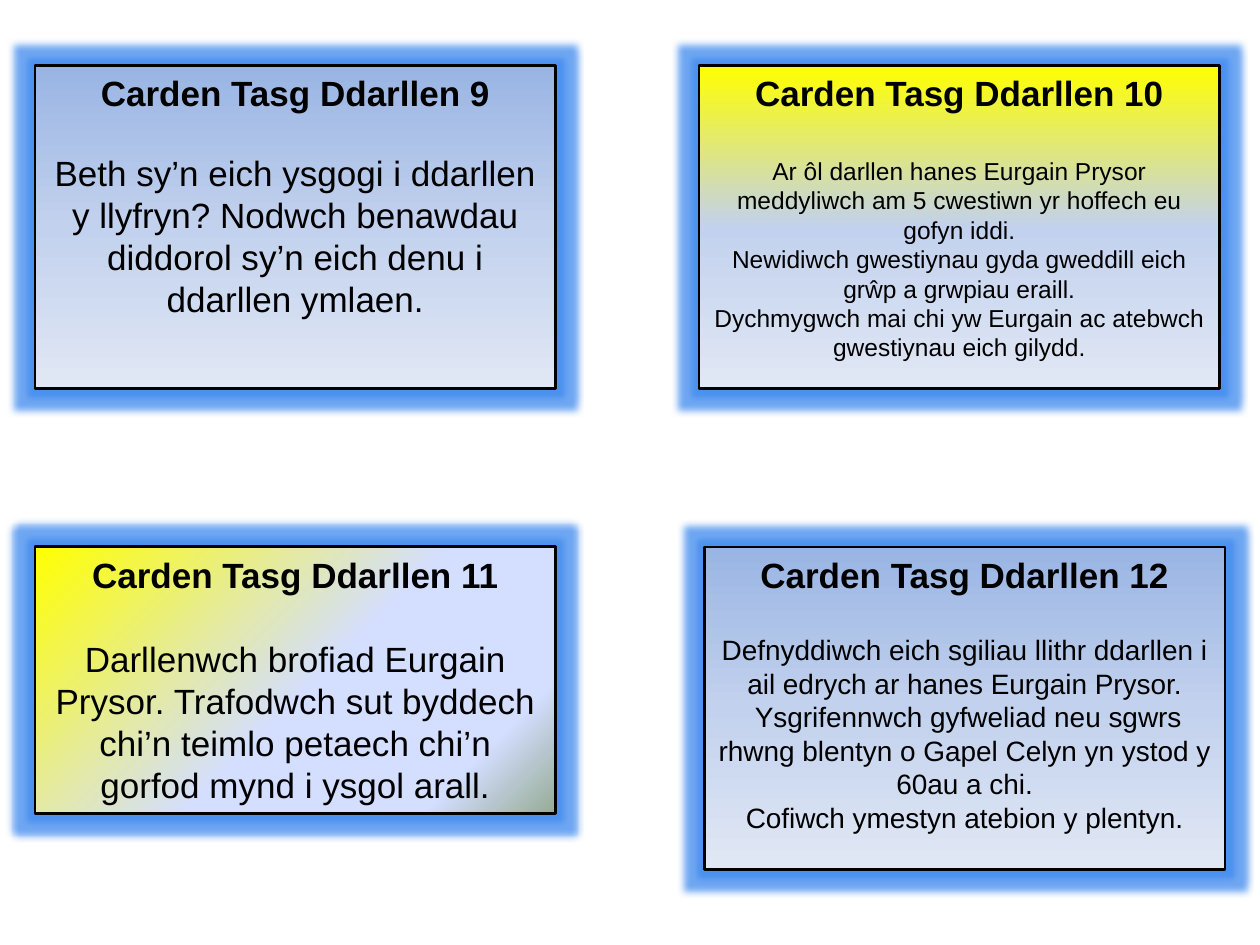
"""Build a slide with four Welsh reading task cards."""

from dataclasses import dataclass

from lxml.etree import SubElement
from pptx import Presentation
from pptx.dml.color import RGBColor
from pptx.enum.shapes import MSO_SHAPE
from pptx.enum.text import MSO_ANCHOR, MSO_AUTO_SIZE, PP_ALIGN
from pptx.oxml.ns import qn
from pptx.shapes.autoshape import Shape
from pptx.slide import Slide
from pptx.util import Pt


@dataclass(frozen=True)
class Gradient:
    stops: tuple[tuple[int, str], ...]
    angle: int = 90


@dataclass(frozen=True)
class Theme:
    font: str = "Arial"
    ink: RGBColor = RGBColor(0, 0, 0)
    title_size: int = 20
    border: float = 1.5
    glow: str = "3F8AEE"
    glow_radius: int = 8
    glow_opacity: int = 75
    blue: Gradient = Gradient(((0, "9AB5E4"), (50, "C2D1ED"), (100, "E1E8F5")))
    yellow: Gradient = Gradient(((0, "FFFF00"), (50, "C2D1ED"), (100, "E1E8F5")))
    diagonal: Gradient = Gradient(
        ((0, "FFFF00"), (53, "D4DEFF"), (83, "D4DEFF"), (100, "96AB94")), 45
    )


@dataclass(frozen=True)
class Card:
    number: int
    left: float
    top: float
    gradient: Gradient
    body_size: int
    title_gap: float
    body: tuple[str, ...]
    height: float = 184.5


THEME = Theme()
CARD_WIDTH = 297.5
LEFT, TOP, BOTTOM = 20, 37.5, 312.5

CARDS = (
    Card(9, LEFT, TOP, THEME.blue, 20, 21.5, (
        "Beth sy’n eich ysgogi i ddarllen y llyfryn? Nodwch benawdau "
        "diddorol sy’n eich denu i ddarllen ymlaen.",
    )),
    Card(11, LEFT, BOTTOM, THEME.diagonal, 20, 24, (
        "Darllenwch brofiad Eurgain Prysor. Trafodwch sut byddech chi’n "
        "teimlo petaech chi’n gorfod mynd i ysgol arall.",
    ), height=152.5),
    Card(10, 399.5, TOP, THEME.yellow, 14, 24, (
        "Ar ôl darllen hanes Eurgain Prysor meddyliwch am 5 cwestiwn yr "
        "hoffech eu gofyn iddi.",
        "Newidiwch gwestiynau gyda gweddill eich grŵp a grwpiau eraill.",
        "Dychmygwch mai chi yw Eurgain ac atebwch gwestiynau eich gilydd.",
    )),
    Card(12, 402.5, BOTTOM, THEME.blue, 16, 21.5, (
        "Defnyddiwch eich sgiliau llithr ddarllen i ail edrych ar hanes "
        "Eurgain Prysor.",
        " Ysgrifennwch gyfweliad neu sgwrs rhwng blentyn o Gapel Celyn yn "
        "ystod y 60au a chi.",
        "Cofiwch ymestyn atebion y plentyn.",
    )),
)


def fill_gradient(shape: Shape, gradient: Gradient) -> None:
    shape.fill.gradient()
    shape.fill.gradient_angle = 360 - gradient.angle
    stop_list = shape.element.spPr.find(qn("a:gradFill")).find(qn("a:gsLst"))
    stop_list.clear()
    for position, color in gradient.stops:
        stop = SubElement(stop_list, qn("a:gs"), pos=str(position * 1000))
        SubElement(stop, qn("a:srgbClr"), val=color)


def add_glow(shape: Shape) -> None:
    shape.shadow.inherit = False
    effects = shape.element.spPr.find(qn("a:effectLst"))
    glow = SubElement(effects, qn("a:glow"), rad=str(Pt(THEME.glow_radius)))
    color = SubElement(glow, qn("a:srgbClr"), val=THEME.glow)
    SubElement(color, qn("a:alpha"), val=str(THEME.glow_opacity * 1000))


def write_text(shape: Shape, card: Card) -> None:
    frame = shape.text_frame
    frame.word_wrap = True
    frame.auto_size = MSO_AUTO_SIZE.NONE
    frame.vertical_anchor = MSO_ANCHOR.TOP
    frame.text = "\n".join((f"Carden Tasg Ddarllen {card.number}", *card.body))
    for index, paragraph in enumerate(frame.paragraphs):
        is_title = index == 0
        paragraph.alignment = PP_ALIGN.CENTER
        paragraph.space_after = Pt(card.title_gap if is_title else 0)
        paragraph.font.name = THEME.font
        paragraph.font.size = Pt(THEME.title_size if is_title else card.body_size)
        paragraph.font.bold = is_title
        paragraph.font.color.rgb = THEME.ink


def add_card(slide: Slide, card: Card) -> None:
    shape = slide.shapes.add_shape(
        MSO_SHAPE.RECTANGLE,
        Pt(card.left), Pt(card.top), Pt(CARD_WIDTH), Pt(card.height),
    )
    fill_gradient(shape, card.gradient)
    shape.line.color.rgb = THEME.ink
    shape.line.width = Pt(THEME.border)
    add_glow(shape)
    write_text(shape, card)


def main() -> None:
    presentation = Presentation()
    presentation.slide_width, presentation.slide_height = Pt(720), Pt(540)
    slide = presentation.slides.add_slide(presentation.slide_layouts[6])
    for card in CARDS:
        add_card(slide, card)
    presentation.save("out.pptx")


if __name__ == "__main__":
    main()
